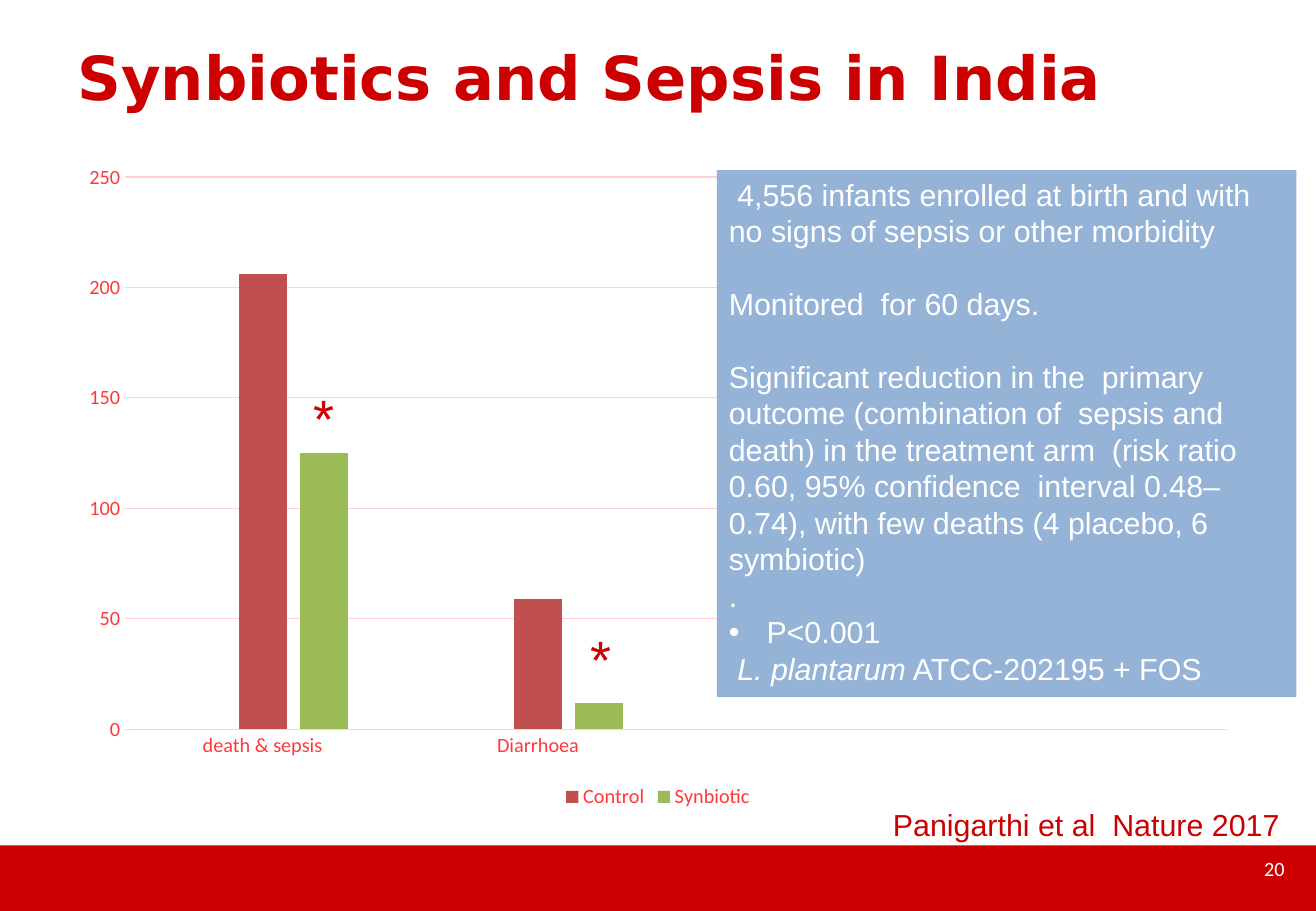
from dataclasses import dataclass

from lxml import etree
from pptx import Presentation
from pptx import util as u
from pptx.chart.data import CategoryChartData
from pptx.dml.color import RGBColor
from pptx.enum import chart as ch, shapes, text
from pptx.oxml import parse_xml
from pptx.oxml.ns import nsdecls, qn


@dataclass(frozen=True)
class Theme:
    red: str = "CC0000"
    axis_red: str = "FF3838"
    grid_pink: str = "FFD1D1"
    panel_blue: str = "95B3D7"
    white: str = "FFFFFF"
    body: str = "Arial"
    small: str = "Calibri"
    heading: str = "DejaVu Sans"
    title_size: int = 36
    star_size: int = 32
    body_size: int = 18
    small_size: int = 12


@dataclass(frozen=True)
class Box:
    left: float
    top: float
    width: float
    height: float

    def lengths(self) -> tuple:
        return tuple(map(u.Inches, (self.left, self.top, self.width, self.height)))


@dataclass(frozen=True)
class Label:
    words: str
    box: Box
    size: int
    color: str = "CC0000"
    font: str = "Arial"
    bold: bool = False
    align: text.PP_ALIGN = text.PP_ALIGN.LEFT
    anchor: text.MSO_ANCHOR = text.MSO_ANCHOR.TOP
    wrap: bool = True
    side_inset: float = 0.1


@dataclass(frozen=True)
class Finding:
    spans: tuple  # words, with every second span in italics
    gap: bool = False
    bullet: bool = False


@dataclass(frozen=True)
class Arm:
    name: str
    values: tuple
    color: str


THEME = Theme()
STAR_BOXES = (Box(2.58, 3.12, 0.08, 0.64), Box(4.86, 5.1, 0.08, 0.64))
LABELS = [
    Label("Synbiotics and Sepsis in India", Box(0.54, 0.28, 9.75, 0.7),
          THEME.title_size, font=THEME.heading, bold=True,
          anchor=text.MSO_ANCHOR.MIDDLE),
    Label("20", Box(8.14, 6.95, 2.53, 0.4), THEME.small_size, THEME.white,
          THEME.small, align=text.PP_ALIGN.RIGHT, anchor=text.MSO_ANCHOR.MIDDLE),
    Label("Panigarthi et al  Nature 2017", Box(7.25, 6.59, 3.41, 0.4),
          THEME.body_size, wrap=False),
    *(Label("*", box, THEME.star_size, side_inset=0) for box in STAR_BOXES),
]
FINDINGS = [
    Finding((" 4,556 infants enrolled at birth and with no signs of sepsis "
             "or other morbidity",)),
    Finding(("Monitored  for 60 days.",), gap=True),
    Finding(("Significant reduction in the  primary outcome (combination of  "
             "sepsis and death) in the treatment arm  (risk ratio 0.60, 95% "
             "confidence  interval 0.48–0.74), with few deaths (4 placebo, "
             "6 symbiotic)",), gap=True),
    Finding((".",)),
    Finding(("P<0.001",), bullet=True),
    Finding((" ", "L. plantarum", " ATCC-202195 + FOS")),
]
CATEGORIES = ("death & sepsis", "Diarrhoea", "", "")
ARMS = [
    Arm("Series 1", (None,) * 4, THEME.panel_blue),
    Arm("Control", (206, 59, None, None), "C0504D"),
    Arm("Synbiotic", (125, 12, None, None), "9BBB59"),
]


def set_font(font, name: str, size: int, color: str, bold: bool = False) -> None:
    font.name, font.size, font.bold = name, u.Pt(size), bold
    font.color.rgb = RGBColor.from_string(color)


def add_block(page, box: Box, color: str):
    block = page.shapes.add_shape(shapes.MSO_SHAPE.RECTANGLE, *box.lengths())
    block.shadow.inherit = False
    block.fill.solid()
    block.fill.fore_color.rgb = RGBColor.from_string(color)
    block.line.fill.background()
    return block


def add_label(page, label: Label) -> None:
    frame = page.shapes.add_textbox(*label.box.lengths()).text_frame
    frame.word_wrap = label.wrap
    frame.vertical_anchor = label.anchor
    frame.margin_left = frame.margin_right = u.Inches(label.side_inset)
    para = frame.paragraphs[0]
    para.text = label.words
    para.alignment = label.align
    set_font(para.font, label.font, label.size, label.color, label.bold)


def add_bullet(para) -> None:
    props = para._p.get_or_add_pPr()
    props.set("marL", str(u.Inches(0.31)))
    props.set("indent", str(-u.Inches(0.31)))
    etree.SubElement(props, qn("a:buFont")).set("typeface", THEME.body)
    etree.SubElement(props, qn("a:buChar")).set("char", "•")


def add_findings(page, box: Box) -> None:
    frame = add_block(page, box, THEME.panel_blue).text_frame
    frame.word_wrap = True
    frame.vertical_anchor = text.MSO_ANCHOR.TOP
    for index, finding in enumerate(FINDINGS):
        para = frame.add_paragraph() if index else frame.paragraphs[0]
        para.alignment = text.PP_ALIGN.LEFT
        if finding.gap:
            para.space_before = u.Pt(21.6)
        if finding.bullet:
            add_bullet(para)
        set_font(para.font, THEME.body, THEME.body_size, THEME.white)
        for position, words in enumerate(finding.spans):
            span = para.add_run()
            span.text = words
            if position % 2:
                span.font.italic = True


def style_line(line) -> None:
    line.color.rgb = RGBColor.from_string(THEME.grid_pink)
    line.width = u.Pt(0.75)


def add_outcome_chart(page, box: Box) -> None:
    data = CategoryChartData()
    data.categories = CATEGORIES
    for arm in ARMS:
        data.add_series(arm.name, arm.values)
    chart = page.shapes.add_chart(
        ch.XL_CHART_TYPE.COLUMN_CLUSTERED, *box.lengths(), data).chart
    chart.has_title = False
    set_font(chart.font, THEME.small, THEME.small_size, THEME.axis_red)

    # Columns
    plot = chart.plots[0]
    plot.vary_by_categories = False
    plot.gap_width, plot.overlap = 219, -27
    for series, arm in zip(plot.series, ARMS):
        series.format.fill.solid()
        series.format.fill.fore_color.rgb = RGBColor.from_string(arm.color)

    # Axes
    for axis in (chart.category_axis, chart.value_axis):
        axis.major_tick_mark = axis.minor_tick_mark = ch.XL_TICK_MARK.NONE
    style_line(chart.category_axis.format.line)
    values = chart.value_axis
    values.minimum_scale, values.maximum_scale, values.major_unit = 0, 250, 50
    values.format.line.fill.background()
    style_line(values.major_gridlines.format.line)

    # Legend without the empty series
    chart.has_legend = True
    legend = chart.legend
    legend.position = ch.XL_LEGEND_POSITION.BOTTOM
    legend.include_in_layout = False
    set_font(legend.font, THEME.small, THEME.small_size, THEME.axis_red)
    legend._element.insert(1, parse_xml(
        f'<c:legendEntry {nsdecls("c")}><c:idx val="0"/>'
        '<c:delete val="1"/></c:legendEntry>'))


def main() -> None:
    deck = Presentation()
    deck.slide_width, deck.slide_height = u.Inches(10.83), u.Inches(7.5)
    page = deck.slides.add_slide(deck.slide_layouts[6])
    add_block(page, Box(0, 6.96, 10.83, 0.54), THEME.red)
    add_outcome_chart(page, Box(0.54, 1.25, 9.75, 5.45))
    add_findings(page, Box(5.9, 1.4, 4.77, 4.34))
    for label in LABELS:
        add_label(page, label)
    deck.save("out.pptx")


if __name__ == "__main__":
    main()
